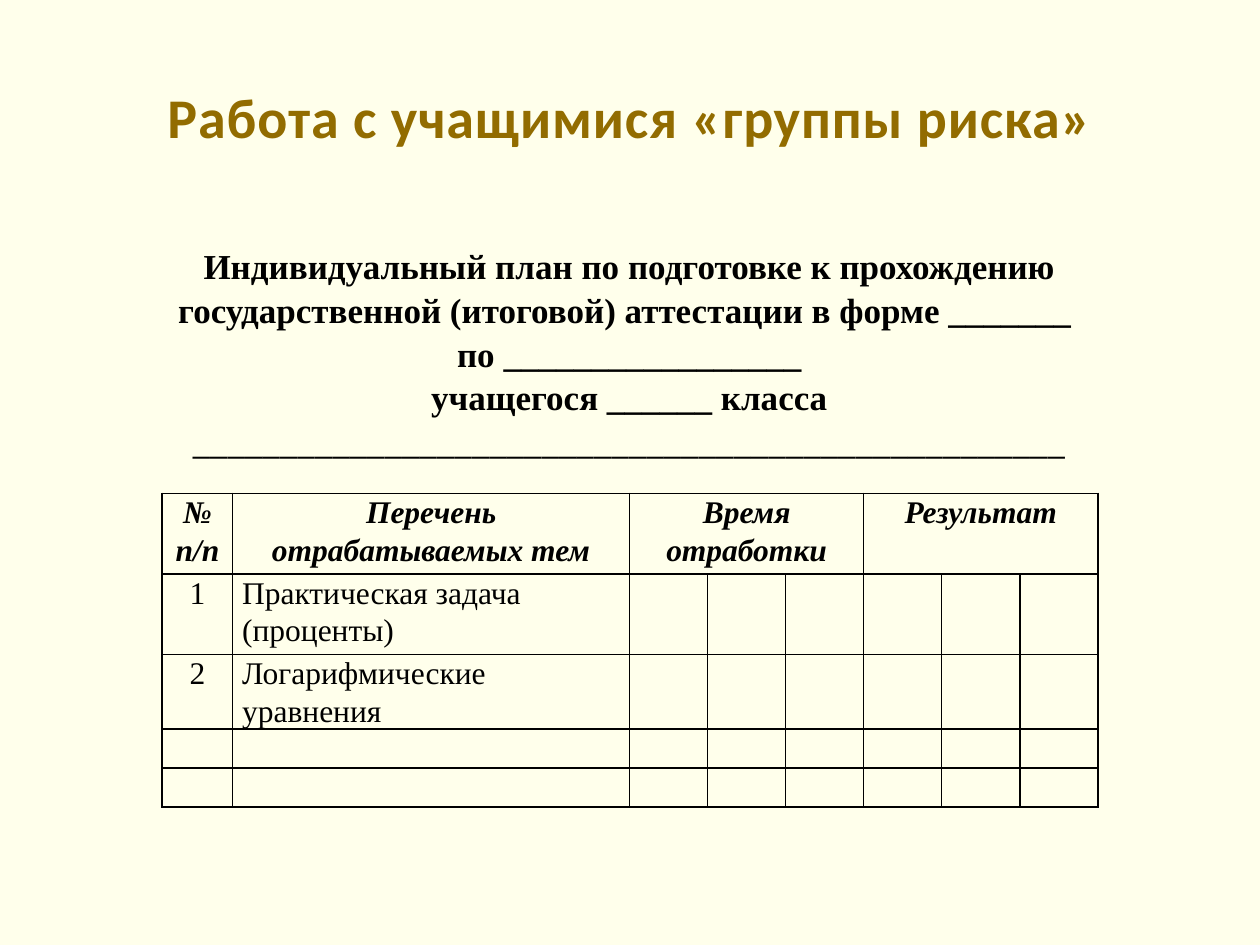
from lxml import etree
from pptx import Presentation
from pptx.dml.color import RGBColor
from pptx.enum import text
from pptx.oxml import ns
from pptx.util import Pt

BLACK = RGBColor(0x00, 0x00, 0x00)
GOLD = RGBColor(0x92, 0x6C, 0x00)
CREAM = RGBColor(0xFF, 0xFF, 0xEB)
SERIF, SANS = "Times New Roman", "Calibri"
CENTER, LEFT = text.PP_ALIGN.CENTER, text.PP_ALIGN.LEFT

TITLE = "Работа с учащимися «группы риска»"
PLAN = [
    "Индивидуальный план по подготовке к прохождению "
    "государственной (итоговой) аттестации в форме _______ ",
    "по _________________",
    "учащегося ______ класса",
]
NAME_LINE = " " + "_" * 50
HEADERS = {0: "№ п/п", 1: "Перечень отрабатываемых тем",
           2: "Время отработки", 5: "Результат"}
TOPICS = ["Практическая задача (проценты)", "Логарифмические уравнения"]

TITLE_BOX = (36, 21.6, 648, 90)
PLAN_BOX = (38.9, 135.4, 641.5, 150.5)
TABLE_LEFT, TABLE_TOP = 92.7, 281.9
COLUMNS = [40.3, 226.8] + [44.6] * 6
ROWS = [46, 46, 42.5, 22.3, 22.3]
SPAN = 3


def add_run(paragraph, words, size=20, font=SERIF, color=BLACK, bold=False, italic=False):
    run = paragraph.add_run()
    run.text = words
    run.font.size, run.font.name = Pt(size), font
    run.font.bold, run.font.italic = bold, italic
    run.font.color.rgb = color
    return run


def place(shape, box):
    shape.left, shape.top, shape.width, shape.height = map(Pt, box)
    shape.text_frame.auto_size = text.MSO_AUTO_SIZE.NONE
    shape.text_frame.word_wrap = True


def format_cell(cell):
    """Black borders all round, no fill, no margin above or below."""
    properties = cell._tc.get_or_add_tcPr()
    for side in ("a:lnL", "a:lnR", "a:lnT", "a:lnB"):
        line = etree.SubElement(properties, ns.qn(side), w=str(Pt(1)))
        fill = etree.SubElement(line, ns.qn("a:solidFill"))
        etree.SubElement(fill, ns.qn("a:srgbClr"), val=str(BLACK))
    cell.fill.background()
    cell.margin_left = cell.margin_right = Pt(5.4)
    cell.margin_top = cell.margin_bottom = 0
    # An empty cell must not stretch its row
    end = etree.SubElement(cell.text_frame.paragraphs[0]._p, ns.qn("a:endParaRPr"))
    end.set("sz", "1200")


def fill_cell(cell, words, align=CENTER, **style):
    paragraph = cell.text_frame.paragraphs[0]
    paragraph.alignment = align
    paragraph.line_spacing = 1.07
    add_run(paragraph, words, size=18, **style)


def add_title(slide):
    title = slide.shapes.title
    place(title, TITLE_BOX)
    title.text_frame.vertical_anchor = text.MSO_ANCHOR.MIDDLE
    paragraph = title.text_frame.paragraphs[0]
    paragraph.alignment = CENTER
    run = add_run(paragraph, TITLE, size=32, font=SANS, color=GOLD, bold=True)
    run.font._element.set("spc", "50")


def add_plan(slide):
    body = slide.placeholders[1]
    place(body, PLAN_BOX)
    frame = body.text_frame
    frame.vertical_anchor = text.MSO_ANCHOR.TOP
    for index, words in enumerate(PLAN):
        paragraph = frame.add_paragraph() if index else frame.paragraphs[0]
        paragraph.alignment = CENTER
        paragraph.line_spacing = 1.04
        paragraph.space_before = Pt(0)
        properties = paragraph._p.get_or_add_pPr()
        properties.set("marL", "0")
        properties.set("indent", "0")
        etree.SubElement(properties, ns.qn("a:buNone"))
        add_run(paragraph, words, bold=True)
    add_run(paragraph, NAME_LINE, font=SANS)


def add_topics(slide):
    frame = slide.shapes.add_table(
        len(ROWS), len(COLUMNS), Pt(TABLE_LEFT), Pt(TABLE_TOP),
        Pt(sum(COLUMNS)), Pt(sum(ROWS)))
    table = frame.table
    table.first_row = table.horz_banding = False
    for column, width in zip(table.columns, COLUMNS):
        column.width = Pt(width)
    for row, height in zip(table.rows, ROWS):
        row.height = Pt(height)
    for cell in table.iter_cells():
        format_cell(cell)
    for column, words in HEADERS.items():
        cell = table.cell(0, column)
        if column >= 2:
            cell.merge(table.cell(0, column + SPAN - 1))
        fill_cell(cell, words, bold=True, italic=True)
    for number, topic in enumerate(TOPICS, 1):
        fill_cell(table.cell(number, 0), str(number))
        fill_cell(table.cell(number, 1), topic, align=LEFT)


def main():
    presentation = Presentation()
    presentation.slide_width, presentation.slide_height = Pt(720), Pt(540)
    slide = presentation.slides.add_slide(presentation.slide_layouts[1])
    slide.background.fill.solid()
    slide.background.fill.fore_color.rgb = CREAM
    add_title(slide)
    add_plan(slide)
    add_topics(slide)
    presentation.save("out.pptx")


if __name__ == "__main__":
    main()
